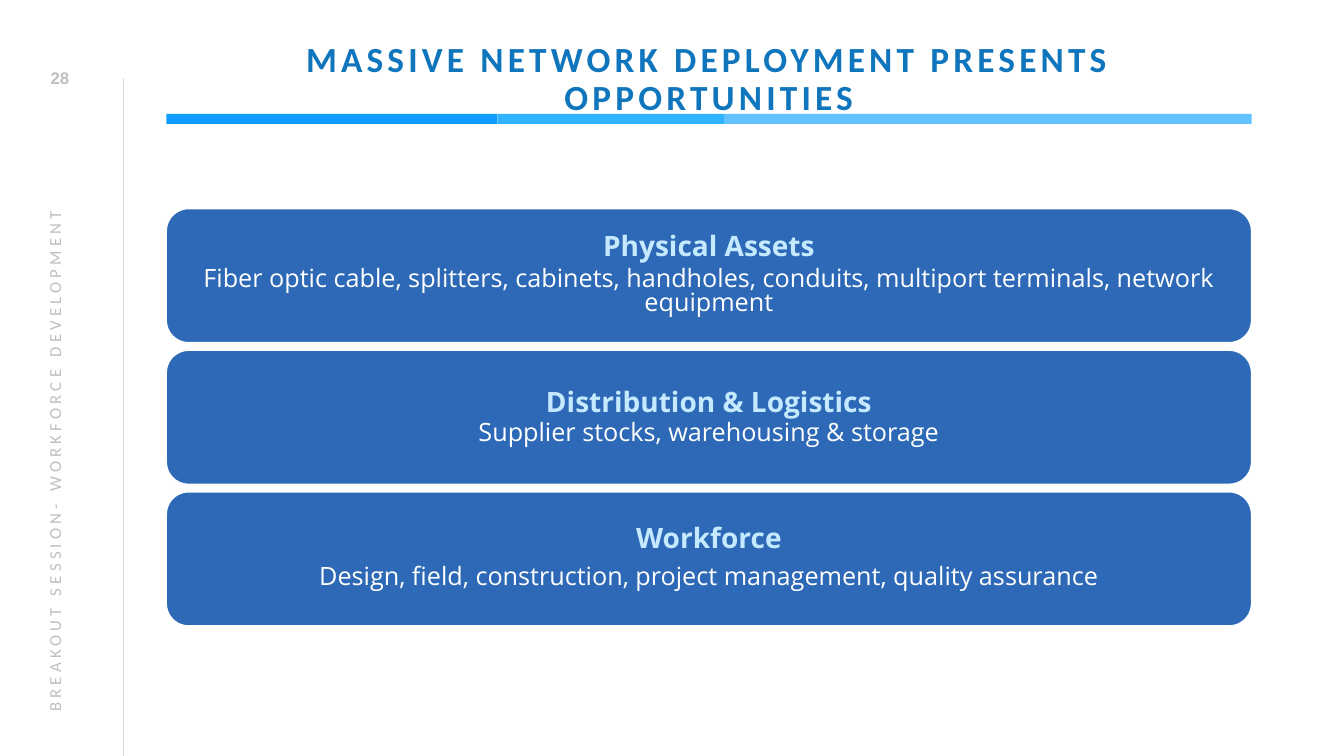
import pptx
import pptx.util
import pptx.dml.color
import pptx.enum.shapes
import pptx.enum.text
import pptx.oxml.ns
from dataclasses import dataclass
from lxml import etree

Pt = pptx.util.Pt
Inches = pptx.util.Inches
SHAPE = pptx.enum.shapes.MSO_SHAPE
ANCHOR = pptx.enum.text.MSO_ANCHOR
ALIGN = pptx.enum.text.PP_ALIGN
COLS, ROWS = 160, 90


@dataclass(frozen=True)
class Theme:
    title: str = "0F75BC"
    muted: str = "BFBFBF"
    rule: str = "D9D9D9"
    card: str = "2D69B6"
    heading: str = "C5EAFF"
    white: str = "FFFFFF"
    bars: tuple = ("119DFF", "31B2FF", "62C1FF")
    title_size: float = 25.2
    heading_size: float = 20
    body_size: float = 18
    small_size: float = 12
    title_font: str = "Calibri"
    body_font: str = "Open Sans"
    number_font: str = "Arial"


class Deck:
    def __init__(self, theme):
        self.theme = theme
        self.prs = pptx.Presentation()
        self.prs.slide_width, self.prs.slide_height = Inches(13.33), Inches(7.5)
        self.s = self.prs.slides.add_slide(self.prs.slide_layouts[6])

    def grid(self, col, row):
        return (round(self.prs.slide_width * col / COLS),
                round(self.prs.slide_height * row / ROWS))

    def box(self, col, row, cols, rows):
        return self.grid(col, row) + self.grid(cols, rows)

    def rgb(self, color):
        return pptx.dml.color.RGBColor.from_string(color)

    def style(self, p, font, size, color, bold=False, align=ALIGN.CENTER):
        p.alignment = align
        p.font.name, p.font.size, p.font.bold = font, Pt(size), bold
        p.font.color.rgb = self.rgb(color)

    def frame(self, sp, anchor, insets):
        tf = sp.text_frame
        tf.word_wrap = True
        tf.vertical_anchor = anchor
        tf.margin_left, tf.margin_top, tf.margin_right, tf.margin_bottom = map(Inches, insets)
        return tf

    def text(self, area, text, font, size, color, bold=False, align=ALIGN.CENTER,
             anchor=ANCHOR.MIDDLE, insets=(0.1, 0.05, 0.1, 0.05), tracking=0,
             line_spacing=1.0, rotation=0):
        sp = self.s.shapes.add_textbox(*self.box(*area))
        sp.rotation = rotation
        p = self.frame(sp, anchor, insets).paragraphs[0]
        r = p.add_run()
        r.text = text
        p.line_spacing = line_spacing
        self.style(p, font, size, color, bold, align)
        if tracking:
            r.font._element.set("spc", str(tracking * 100))

    def shape(self, kind, area, fill, line=None):
        sp = self.s.shapes.add_shape(kind, *self.box(*area))
        sp.shadow.inherit = False
        sp.fill.solid()
        sp.fill.fore_color.rgb = self.rgb(fill)
        if line:
            sp.line.color.rgb = self.rgb(line)
            sp.line.width = Pt(1)
        else:
            sp.line.fill.background()
        return sp

    def card(self, area, heading, body, spacing, gap):
        t = self.theme
        sp = self.shape(SHAPE.ROUNDED_RECTANGLE, area, t.card, t.white)
        tf = self.frame(sp, ANCHOR.MIDDLE, (0.08,) * 4)
        p = tf.paragraphs[0]
        p.text = heading
        p.line_spacing = spacing
        self.style(p, t.body_font, t.heading_size, t.heading, True)
        p = tf.add_paragraph()
        p.text = body
        p.line_spacing = spacing
        p.space_before = Pt(gap)
        self.style(p, t.body_font, t.body_size, t.white)

    def line(self, start, end, color, width):
        c = self.s.shapes.add_connector(pptx.enum.shapes.MSO_CONNECTOR.STRAIGHT,
                                        *self.grid(*start), *self.grid(*end))
        c.line.color.rgb = self.rgb(color)
        c.line.width = Pt(width)
        etree.SubElement(c._element.spPr, pptx.oxml.ns.qn("a:effectLst"))


def main():
    t = Theme()
    deck = Deck(t)
    left, width = 19.8, 129.2

    deck.line((14.64, ROWS), (14.64, 9.24), t.rule, 0.5)
    col = left
    for color, cols in zip(t.bars, (39.4, 27, 62.8)):
        deck.shape(SHAPE.RECTANGLE, (col, 13.56, cols, 1.2), color)
        col += cols

    deck.text((left, 4.8, width, 8.88), "MASSIVE NETWORK DEPLOYMENT PRESENTS OPPORTUNITIES",
              t.title_font, t.title_size, t.title, bold=True, insets=(0, 0.05, 0, 0),
              tracking=3, line_spacing=0.9)
    deck.text((3.24, 6.84, 7.8, 4.8), "28", t.number_font, t.small_size, t.muted, bold=True)

    cards = [
        ("Physical Assets",
         "Fiber optic cable, splitters, cabinets, handholes, conduits, "
         "multiport terminals, network equipment", 0.8, 5),
        ("Distribution & Logistics", "Supplier stocks, warehousing & storage", 0.93, 0),
        ("Workforce",
         "Design, field, construction, project management, quality assurance", 0.8, 9),
    ]
    for i, card in enumerate(cards):
        deck.card((left, 24.84 + 16.86 * i, width, 15.96), *card)

    deck.text((-29.04, 47.4, 72.24, 4.8), "BREAKOUT SESSION- WORKFORCE DEVELOPMENT",
              t.title_font, t.small_size, t.muted, align=ALIGN.LEFT, anchor=ANCHOR.TOP,
              tracking=3, rotation=270)
    deck.prs.save("out.pptx")


if __name__ == "__main__":
    main()
